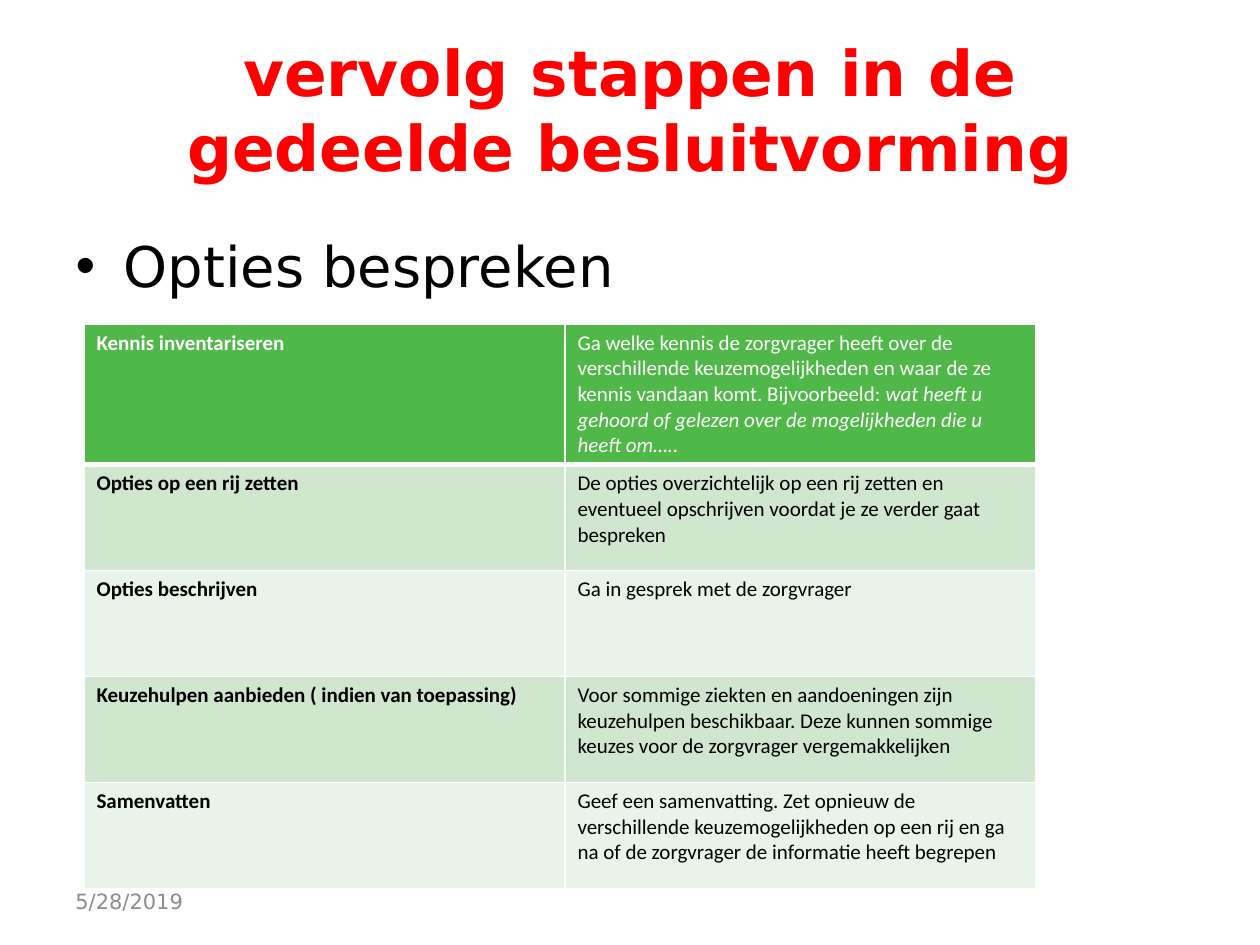
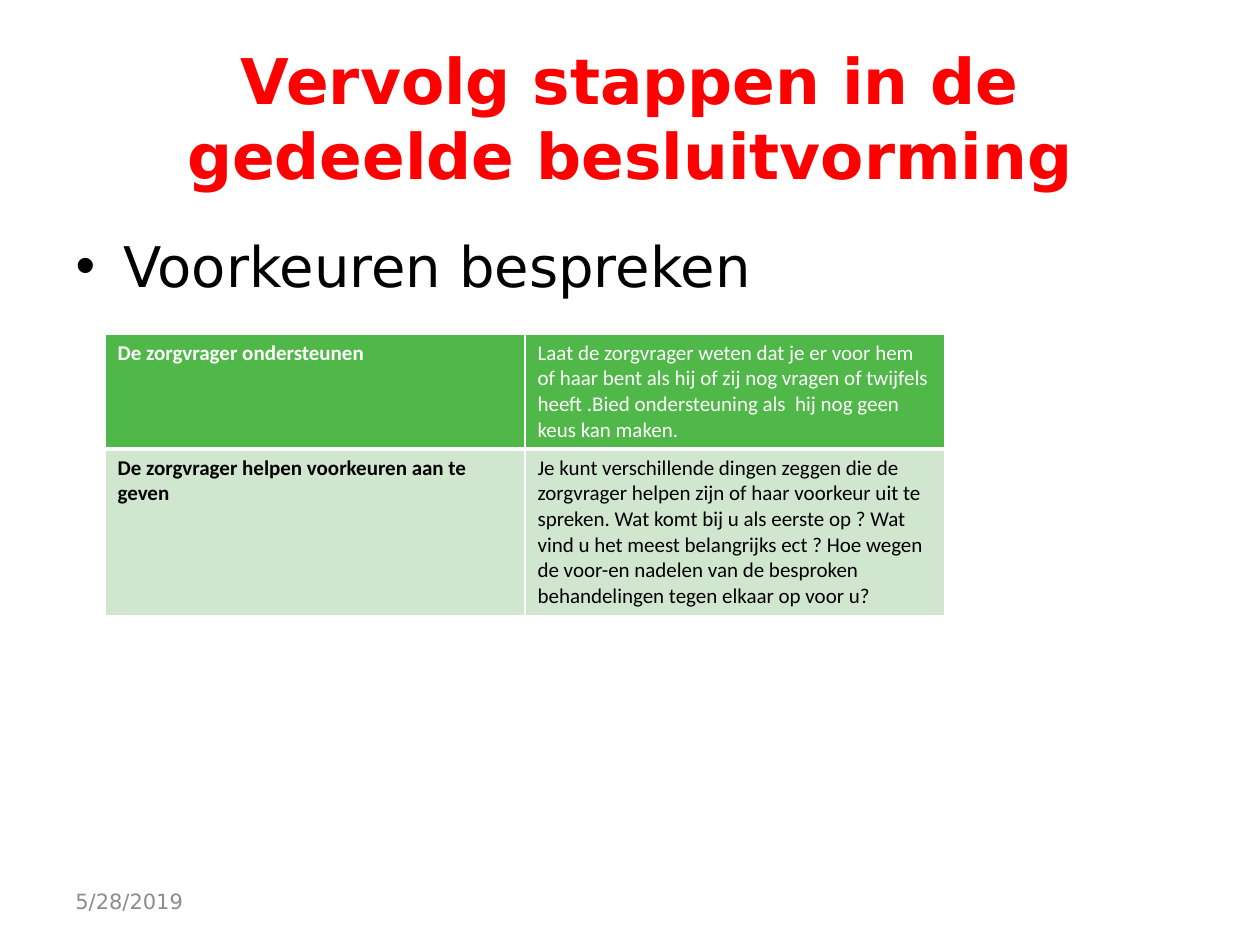
from dataclasses import dataclass

from lxml.etree import SubElement
from pptx import Presentation
from pptx.dml.color import RGBColor
from pptx.enum.text import MSO_ANCHOR, MSO_AUTO_SIZE, PP_ALIGN
from pptx.oxml import parse_xml
from pptx.oxml.ns import nsdecls, qn
from pptx.util import Emu, Pt

EMU_PER_PX = 914400 / 126
COLORS = {
    "title": "FF0000",
    "text": "000000",
    "date": "8C8C8C",
    "header": "50B848",
    "band_dark": "D0E6CF",
    "band_light": "E9F3E9",
    "white": "FFFFFF",
}
HEADING_FONT = "DejaVu Sans"
TABLE_FONT = "Calibri"
DATE = "5/28/2019"


@dataclass(frozen=True)
class Box:
    """A rectangle in pixels."""

    left: int
    top: int
    width: int
    height: int


@dataclass(frozen=True)
class Step:
    """One table row: a step, its explanation and an optional example."""

    name: str
    explanation: str
    height: int
    example: str = ""


@dataclass(frozen=True)
class StepSlide:
    """The content of one slide and the place of its table."""

    title: str
    bullet: str
    table_left: int
    table_top: int
    column_widths: tuple[int, ...]
    steps: tuple[Step, ...]
    title_bottom_inset: int = 6


TITLE_BOX = Box(63, 38, 1134, 157)
BODY_BOX = Box(63, 220, 1134, 624)
DATE_BOX = Box(63, 876, 294, 50)
BULLET_INDENT = 48
BODY_TOP_INSET = 11

SLIDES = (
    StepSlide(
        "vervolg stappen in de gedeelde besluitvorming",
        "Opties bespreken",
        84, 324, (481, 471),
        (
            Step("Kennis inventariseren",
                 "Ga welke kennis de zorgvrager heeft over de verschillende keuzemogelijkheden "
                 "en waar de ze kennis vandaan komt. Bijvoorbeeld: ", 140,
                 "wat heeft u gehoord of gelezen over de mogelijkheden die u heeft om….."),
            Step("Opties op een rij zetten",
                 "De opties overzichtelijk op een rij zetten en eventueel opschrijven "
                 "voordat je ze verder gaat bespreken", 106),
            Step("Opties beschrijven", "Ga in gesprek met de zorgvrager", 106),
            Step("Keuzehulpen aanbieden ( indien van toepassing)",
                 "Voor sommige ziekten en aandoeningen zijn keuzehulpen beschikbaar. "
                 "Deze kunnen sommige keuzes voor de zorgvrager vergemakkelijken", 106),
            Step("Samenvatten",
                 "Geef een samenvatting. Zet opnieuw de verschillende keuzemogelijkheden "
                 "op een rij en ga na of de zorgvrager de informatie heeft begrepen", 106),
        ),
        title_bottom_inset=22,
    ),
    StepSlide(
        "Vervolg stappen in de gedeelde besluitvorming",
        "Voorkeuren bespreken",
        105, 334, (420, 420),
        (
            Step("De zorgvrager ondersteunen",
                 "Laat de zorgvrager weten dat je er voor hem of haar bent als hij of zij nog "
                 "vragen of twijfels heeft .Bied ondersteuning als  hij nog geen keus kan maken.",
                 115),
            Step("De zorgvrager helpen voorkeuren aan te geven",
                 "Je kunt verschillende dingen zeggen die de zorgvrager helpen zijn of haar "
                 "voorkeur uit te spreken. Wat komt bij u als eerste op ? Wat vind u het meest "
                 "belangrijks ect ? Hoe wegen de voor-en nadelen van de besproken behandelingen "
                 "tegen elkaar op voor u?", 166),
        ),
    ),
)


def px(length: int) -> Emu:
    """Turn pixels into EMU."""
    return Emu(round(length * EMU_PER_PX))


def place(shape, box: Box) -> None:
    """Move and size a shape."""
    shape.left, shape.top = px(box.left), px(box.top)
    shape.width, shape.height = px(box.width), px(box.height)


def write_text(paragraph, text: str, *, size: int, color: str, font: str = HEADING_FONT,
               bold: bool = False, italic: bool = False, align=PP_ALIGN.LEFT) -> None:
    """Append a formatted run to a paragraph."""
    paragraph.alignment = align
    paragraph.space_before = Pt(0)
    run = paragraph.add_run()
    run.text = text
    run.font.name = font
    run.font.size = Pt(size)
    run.font.bold = bold
    run.font.italic = italic
    run.font.color.rgb = RGBColor.from_string(COLORS[color])


def prepare_frame(shape, anchor):
    """Set wrapping and anchoring and return the first paragraph."""
    frame = shape.text_frame
    frame.word_wrap = True
    frame.auto_size = MSO_AUTO_SIZE.NONE
    frame.vertical_anchor = anchor
    return frame.paragraphs[0]


def add_title(slide, content: StepSlide) -> None:
    """Fill the title placeholder."""
    title = slide.shapes.title
    place(title, TITLE_BOX)
    paragraph = prepare_frame(title, MSO_ANCHOR.MIDDLE)
    title.text_frame.margin_bottom = px(content.title_bottom_inset)
    write_text(paragraph, content.title, size=36, color="title", bold=True,
               align=PP_ALIGN.CENTER)


def add_bullet(slide, text: str) -> None:
    """Fill the body placeholder with one bullet."""
    body = slide.placeholders[1]
    place(body, BODY_BOX)
    paragraph = prepare_frame(body, MSO_ANCHOR.TOP)
    body.text_frame.margin_top = px(BODY_TOP_INSET)
    properties = paragraph._p.get_or_add_pPr()
    properties.set("marL", str(px(BULLET_INDENT)))
    properties.set("indent", str(-px(BULLET_INDENT)))
    SubElement(properties, qn("a:buChar"), char="•")
    write_text(paragraph, text, size=32, color="text")


def add_date(slide) -> None:
    """Add the date at the foot of the slide."""
    box = slide.shapes.add_textbox(0, 0, 0, 0)
    place(box, DATE_BOX)
    write_text(prepare_frame(box, MSO_ANCHOR.MIDDLE), DATE, size=12, color="date")


def set_borders(cell, top: int, bottom: int) -> None:
    """Draw white borders with the given top and bottom widths in points."""
    properties = cell._tc.get_or_add_tcPr()
    widths = {"lnL": 1, "lnR": 1, "lnT": top, "lnB": bottom}
    for position, (tag, width) in enumerate(widths.items()):
        line = parse_xml(
            f'<a:{tag} {nsdecls("a")} w="{Pt(width)}"><a:solidFill>'
            f'<a:srgbClr val="{COLORS["white"]}"/></a:solidFill></a:{tag}>')
        properties.insert(position, line)


def add_steps(slide, content: StepSlide) -> None:
    """Add the table of steps."""
    steps = content.steps
    table = slide.shapes.add_table(
        len(steps), len(content.column_widths), px(content.table_left), px(content.table_top),
        px(sum(content.column_widths)), px(sum(step.height for step in steps))).table
    for column, width in zip(table.columns, content.column_widths):
        column.width = px(width)
    for index, (row, step) in enumerate(zip(table.rows, steps)):
        row.height = px(step.height)
        is_header = index == 0
        fill = "header" if is_header else ("band_light", "band_dark")[index % 2]
        style = {"size": 12, "font": TABLE_FONT, "color": "white" if is_header else "text"}
        for cell in row.cells:
            cell.fill.solid()
            cell.fill.fore_color.rgb = RGBColor.from_string(COLORS[fill])
            set_borders(cell, top=3 if index == 1 else 1, bottom=3 if is_header else 1)
        name, explanation = (cell.text_frame.paragraphs[0] for cell in row.cells)
        write_text(name, step.name, bold=True, **style)
        write_text(explanation, step.explanation, **style)
        if step.example:
            write_text(explanation, step.example, italic=True, **style)


def main() -> None:
    """Build and save the presentation."""
    presentation = Presentation()
    presentation.slide_width, presentation.slide_height = px(1260), px(945)
    for content in SLIDES:
        slide = presentation.slides.add_slide(presentation.slide_layouts[1])
        add_title(slide, content)
        add_bullet(slide, content.bullet)
        add_date(slide)
        add_steps(slide, content)
    presentation.save("out.pptx")


if __name__ == "__main__":
    main()
